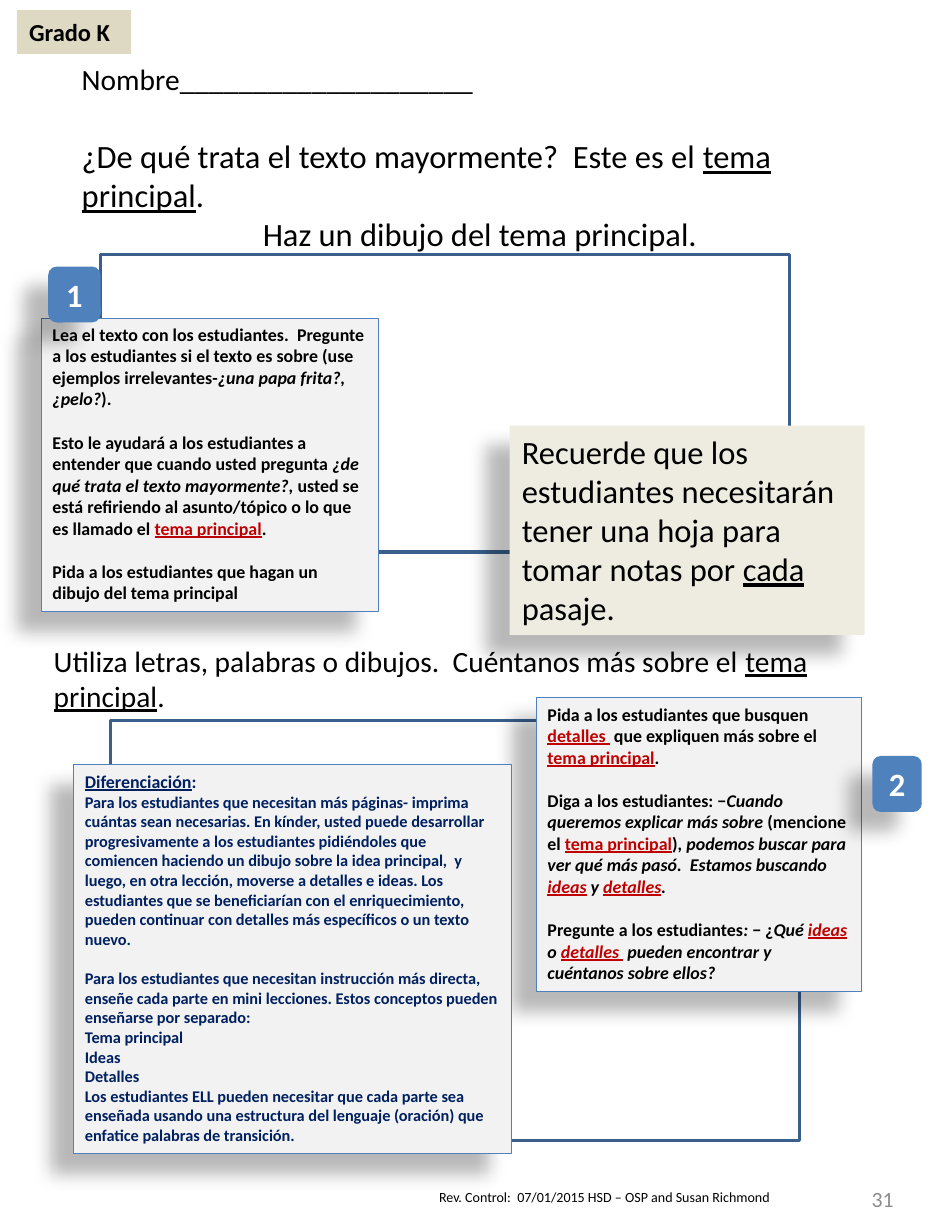
from dataclasses import dataclass

from lxml.etree import SubElement
from pptx import Presentation
from pptx.dml.color import RGBColor
from pptx.enum.shapes import MSO_SHAPE as Kind
from pptx.enum.text import MSO_ANCHOR as Anchor, PP_ALIGN as Align
from pptx.oxml.ns import qn
from pptx.util import Inches, Pt

FONT = "Calibri"
COLORS = {
    "black": "000000", "white": "FFFFFF", "gray": "8C8C8C", "navy": "002060",
    "red": "C00000", "blue": "4F81BD", "frame": "3A5F8C", "pale": "F2F2F2",
    "tan": "DDD9C3", "cream": "EEECE1",
}
THIN = (0.1, 0.05)
WIDE = (0.11, 0.06)
LINE = 1.22  # line height as a share of the text size


@dataclass
class Para:
    """Runs are plain strings or (text, marks): i italic, u underline, r red."""
    runs: list
    size: float
    color: str = "black"
    bold: bool = False
    align: Align = Align.LEFT
    gap: float = 0  # blank space above, in points


@dataclass
class Box:
    at: tuple
    paras: list
    fill: str = ""
    line: str = ""
    width: float = 0.75
    shadow: bool = False
    kind: Kind = Kind.RECTANGLE
    inset: tuple = WIDE
    top: float = 0  # extra space above the text, in inches
    anchor: Anchor = Anchor.TOP


def rgb(name: str) -> RGBColor:
    return RGBColor.from_string(COLORS[name])


def add_shadow(shape) -> None:
    effects = shape._element.spPr.find(qn("a:effectLst"))
    outer = SubElement(effects, qn("a:outerShdw"), blurRad=str(Pt(11.8)),
                       dist=str(Pt(19.7)), dir=str(141 * 60000),
                       algn="ctr", rotWithShape="0")
    tone = SubElement(outer, qn("a:srgbClr"), val=COLORS["black"])
    SubElement(tone, qn("a:alpha"), val="28000")


def write(para, item: Para) -> None:
    para.alignment = item.align
    para.space_before = Pt(item.gap)
    font = para.font
    font.name, font.size, font.bold = FONT, Pt(item.size), item.bold
    font.color.rgb = rgb(item.color)
    for part in item.runs:
        text, marks = (part, "") if isinstance(part, str) else part
        run = para.add_run()
        run.text = text
        if "i" in marks:
            run.font.italic = True
        if "u" in marks:
            run.font.underline = True
        if "r" in marks:
            run.font.color.rgb = rgb("red")


def draw(slide, box: Box) -> None:
    spot = [Inches(n) for n in box.at]
    if box.fill or box.line:
        shape = slide.shapes.add_shape(box.kind, *spot)
        shape.shadow.inherit = False
        if box.fill:
            shape.fill.solid()
            shape.fill.fore_color.rgb = rgb(box.fill)
        else:
            shape.fill.background()
        if box.line:
            shape.line.color.rgb = rgb(box.line)
            shape.line.width = Pt(box.width)
        else:
            shape.line.fill.background()
        if box.shadow:
            add_shadow(shape)
    else:
        shape = slide.shapes.add_textbox(*spot)
    frame = shape.text_frame
    frame.word_wrap = True
    frame.vertical_anchor = box.anchor
    side, edge = (Inches(n) for n in box.inset)
    frame.margin_left = frame.margin_right = side
    frame.margin_bottom = edge
    frame.margin_top = edge + Inches(box.top)
    for i, item in enumerate(box.paras):
        write(frame.add_paragraph() if i else frame.paragraphs[0], item)


def outline(*at: float) -> Box:
    return Box(at, [], line="frame", width=2)


def note(at: tuple, paras: list) -> Box:
    return Box(at, paras, "pale", "blue", shadow=True, inset=THIN)


def badge(at: tuple, text: str) -> Box:
    return Box(at, [Para([text], 20.9, "white", True, Align.CENTER)], "blue",
               shadow=True, kind=Kind.ROUNDED_RECTANGLE, inset=THIN,
               anchor=Anchor.MIDDLE)


def step(*runs, gap: float = 11.5 * LINE) -> Para:
    return Para(list(runs), 11.5, bold=True, gap=gap)


def tip(text: str, gap: float = 0) -> Para:
    return Para([text], 10.5, "navy", True, gap=gap)


TOPIC = ("tema principal", "u")
KEY = ("tema principal", "ur")

BOXES = [
    Box((3.81, 10.56, 4.25, 0.26),
        [Para(["Rev. Control:  07/01/2015 HSD – OSP and Susan Richmond"], 9)],
        inset=(0.11, 0.05)),
    Box((7.17, 10.41, 0.92, 0.59),
        [Para(["31"], 14, "gray", align=Align.RIGHT)], anchor=Anchor.MIDDLE),
    Box((0.62, 0.17, 7.33, 2.16), [
        Para(["Nombre____________________"], 18.9),
        Para(["¿De qué trata el texto mayormente?  Este es el ", TOPIC, "."],
             20.9, gap=20.9 * LINE),
        Para(["Haz un dibujo del tema principal."], 20.9, align=Align.CENTER),
    ], top=0.32),
    outline(0.9, 2.27, 6.15, 2.66),
    Box((0.15, 0.09, 1.02, 0.39), [Para(["Grado K"], 15.7, bold=True)], "tan"),
    Box((0.37, 5.68, 7.8, 0.75), [
        Para(["Utiliza letras, palabras o dibujos.  Cuéntanos más sobre el ",
              TOPIC, "."], 18.9),
    ]),
    outline(0.99, 6.43, 6.15, 3.75),
    note((0.37, 2.84, 3.01, 2.62), [
        step("Lea el texto con los estudiantes.  Pregunte a los estudiantes si "
             "el texto es sobre (use ejemplos irrelevantes-",
             ("¿una papa frita?, ¿pelo?", "i"), ").", gap=0),
        step("Esto le ayudará a los estudiantes a entender que cuando usted "
             "pregunta ", ("¿de qué trata el texto mayormente?, ", "i"),
             "usted se está refiriendo al asunto/tópico o lo que es llamado el ",
             KEY, "."),
        step("Pida a los estudiantes que hagan un dibujo del tema principal"),
    ]),
    badge((0.43, 2.38, 0.47, 0.5), "1"),
    note((4.79, 6.23, 2.9, 2.62), [
        step("Pida a los estudiantes que busquen ", ("detalles ", "ur"),
             " que expliquen más sobre el ", KEY, ".", gap=0),
        step("Diga a los estudiantes: −",
             ("Cuando queremos explicar más sobre ", "i"), "(mencione el ",
             KEY, ")",
             (", podemos buscar para ver qué más pasó.  Estamos buscando ", "i"),
             ("ideas", "iur"), (" y ", "i"), ("detalles", "iur"), (".", "i")),
        step("Pregunte a los estudiantes", (": ", "i"), "− ¿", ("Qué ", "i"),
             ("ideas ", "iur"), ("o ", "i"), ("detalles ", "iur"),
             (" pueden encontrar y cuéntanos sobre ellos?", "i")),
    ]),
    badge((7.79, 6.75, 0.44, 0.5), "2"),
    Box((4.55, 3.8, 3.17, 1.87), [
        Para(["Recuerde que los estudiantes necesitarán tener una hoja para "
              "tomar notas por ", ("cada", "u"), " pasaje."], 20.9),
    ], "cream", shadow=True),
    note((0.66, 6.83, 3.91, 3.47), [
        Para([("Diferenciación", "u"), ":"], 11.5, "navy", True),
        tip("Para los estudiantes que necesitan más páginas- imprima cuántas "
            "sean necesarias. En kínder, usted puede desarrollar "
            "progresivamente a los estudiantes pidiéndoles que comiencen "
            "haciendo un dibujo sobre la idea principal,  y luego, en otra "
            "lección, moverse a detalles e ideas. Los estudiantes que se "
            "beneficiarían con el enriquecimiento, pueden continuar con "
            "detalles más específicos o un texto nuevo."),
        tip("Para los estudiantes que necesitan instrucción más directa, "
            "enseñe cada parte en mini lecciones. Estos conceptos pueden "
            "enseñarse por separado:", gap=10.5 * LINE),
        *map(tip, ("Tema principal", "Ideas", "Detalles")),
        tip("Los estudiantes ELL pueden necesitar que cada parte sea enseñada "
            "usando una estructura del lenguaje (oración) que enfatice "
            "palabras de transición."),
    ]),
]


def main() -> None:
    deck = Presentation()
    deck.slide_width, deck.slide_height = Inches(8.5), Inches(11)
    slide = deck.slides.add_slide(deck.slide_layouts[6])
    for box in BOXES:
        draw(slide, box)
    deck.save("out.pptx")


if __name__ == "__main__":
    main()
